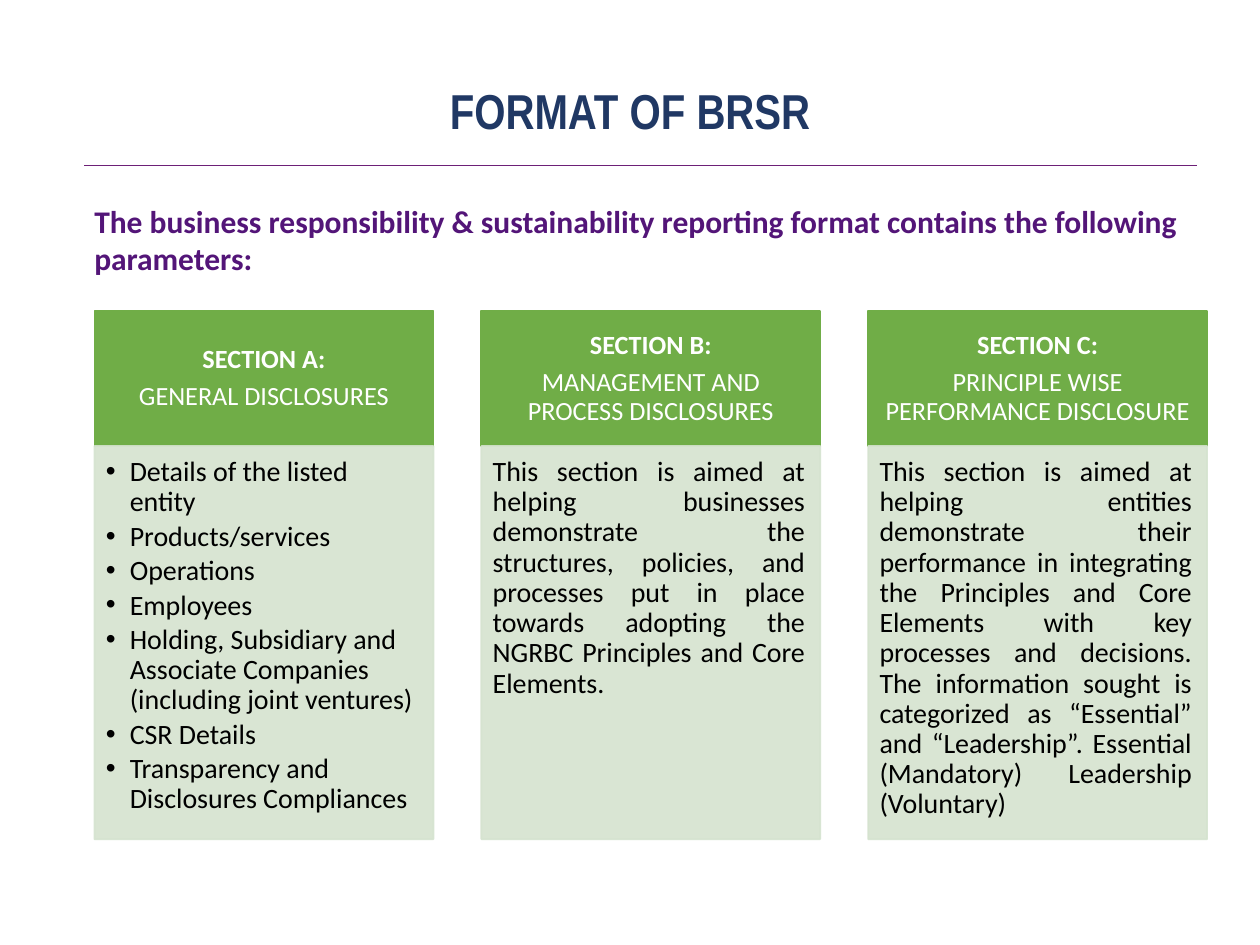
"""Build the slide on the format of BRSR with its three section columns."""
import pptx
import pptx.util
import pptx.dml.color
import pptx.enum.shapes
import pptx.enum.text
import pptx.oxml
import pptx.oxml.ns
import lxml.etree

Inches, Pt = pptx.util.Inches, pptx.util.Pt
RGBColor = pptx.dml.color.RGBColor
PP_ALIGN, MSO_ANCHOR = pptx.enum.text.PP_ALIGN, pptx.enum.text.MSO_ANCHOR
qn = pptx.oxml.ns.qn

NAVY = RGBColor(0x20, 0x38, 0x64)
PURPLE = RGBColor(0x53, 0x15, 0x78)
RULE = RGBColor(0x6D, 0x20, 0x77)
GREEN = RGBColor(0x70, 0xAD, 0x47)
PALE = RGBColor(0xD5, 0xE3, 0xCF)
WHITE = RGBColor(0xFF, 0xFF, 0xFF)
BLACK = RGBColor(0, 0, 0)

LEFT, PITCH, COL_W = 0.75, 3.07, 2.69
HEAD_TOP, HEAD_H, BODY_H = 2.47, 1.07, 3.12

SECTIONS = [
    ("SECTION A:", "GENERAL DISCLOSURES",
     ["Details of the listed entity", "Products/services", "Operations", "Employees",
      "Holding, Subsidiary and Associate Companies (including joint ventures)",
      "CSR Details", "Transparency and Disclosures Compliances"]),
    ("SECTION B:", "MANAGEMENT AND PROCESS DISCLOSURES",
     ["This section is aimed at helping businesses demonstrate the structures, policies, "
      "and processes put in place towards adopting the NGRBC Principles and Core Elements."]),
    ("SECTION C:", "PRINCIPLE WISE PERFORMANCE DISCLOSURE",
     ["This section is aimed at helping entities demonstrate their performance in "
      "integrating the Principles and Core Elements with key processes and decisions. "
      "The information sought is categorized as “Essential” and “Leadership”. "
      "Essential (Mandatory) Leadership (Voluntary)"]),
]


def add_run(p, text, size, color, bold=False, font="Calibri"):
    r = p.add_run()
    r.text = text
    r.font.name, r.font.size, r.font.bold = font, Pt(size), bold
    r.font.color.rgb = color


def add_panel(s, x, y, h, color, margins, anchor):
    sp = s.shapes.add_shape(pptx.enum.shapes.MSO_SHAPE.RECTANGLE,
                            Inches(x), Inches(y), Inches(COL_W), Inches(h))
    sp.shadow.inherit = False
    sp.fill.solid()
    sp.fill.fore_color.rgb = color
    sp.line.color.rgb = color
    sp.line.width = Pt(1)
    tf = sp.text_frame
    tf.word_wrap = True
    tf.vertical_anchor = anchor
    tf.margin_left, tf.margin_top, tf.margin_right, tf.margin_bottom = map(Inches, margins)
    return sp


prs = pptx.Presentation()
prs.slide_width, prs.slide_height = Inches(10), Inches(7.5)
s = prs.slides.add_slide(prs.slide_layouts[5])

line = s.shapes.add_connector(pptx.enum.shapes.MSO_CONNECTOR.STRAIGHT,
                              Inches(0.67), Inches(1.31), Inches(9.5), Inches(1.31))
line.line.color.rgb = RULE
line.line.width = Pt(0.5)
lxml.etree.SubElement(line._element.spPr, qn("a:effectLst"))

title = s.shapes.title
title.left, title.top, title.width, title.height = map(Inches, (0.5, 0.49, 9, 0.82))
title.text_frame.vertical_anchor = MSO_ANCHOR.MIDDLE
p = title.text_frame.paragraphs[0]
p.alignment, p.line_spacing = PP_ALIGN.CENTER, 0.9
add_run(p, "FORMAT OF BRSR", 28, NAVY, True, "Arial Narrow")

intro = s.shapes.add_textbox(Inches(0.65), Inches(1.55), Inches(8.93), Inches(1.01))
intro.text_frame.word_wrap = True
add_run(intro.text_frame.paragraphs[0],
        "The business responsibility & sustainability reporting format contains "
        "the following parameters:", 18, PURPLE, True)

for col, (section, name, points) in enumerate(SECTIONS):
    x = LEFT + col * PITCH
    head = add_panel(s, x, HEAD_TOP, HEAD_H, GREEN,
                     (0.12, 0.07, 0.12, 0.07), MSO_ANCHOR.MIDDLE)
    tf = head.text_frame
    for p, text, bold in ((tf.paragraphs[0], section, True), (tf.add_paragraph(), name, False)):
        p.alignment, p.line_spacing, p.space_after = PP_ALIGN.CENTER, 0.9, Pt(5.25)
        add_run(p, text, 15, WHITE, bold)

    body = add_panel(s, x, HEAD_TOP + HEAD_H, BODY_H, PALE,
                     (0.09, 0.09, 0.12, 0.14), MSO_ANCHOR.TOP)
    for clr in body._element.spPr.iter(qn("a:srgbClr")):
        lxml.etree.SubElement(clr, qn("a:alpha")).set("val", "90000")
    tf = body.text_frame
    for i, text in enumerate(points):
        p = tf.add_paragraph() if i else tf.paragraphs[0]
        p.line_spacing, p.space_after = 0.9, Pt(2.4)
        p.alignment = PP_ALIGN.JUSTIFY
        if len(points) > 1:
            p.alignment = PP_ALIGN.LEFT
            pPr = p._p.get_or_add_pPr()
            pPr.set("marL", str(Inches(0.19)))
            pPr.set("indent", str(-Inches(0.19)))
            lxml.etree.SubElement(pPr, qn("a:buFont")).set("typeface", "Arial")
            lxml.etree.SubElement(pPr, qn("a:buChar")).set("char", "•")
        add_run(p, text, 16, BLACK)

prs.save("out.pptx")
